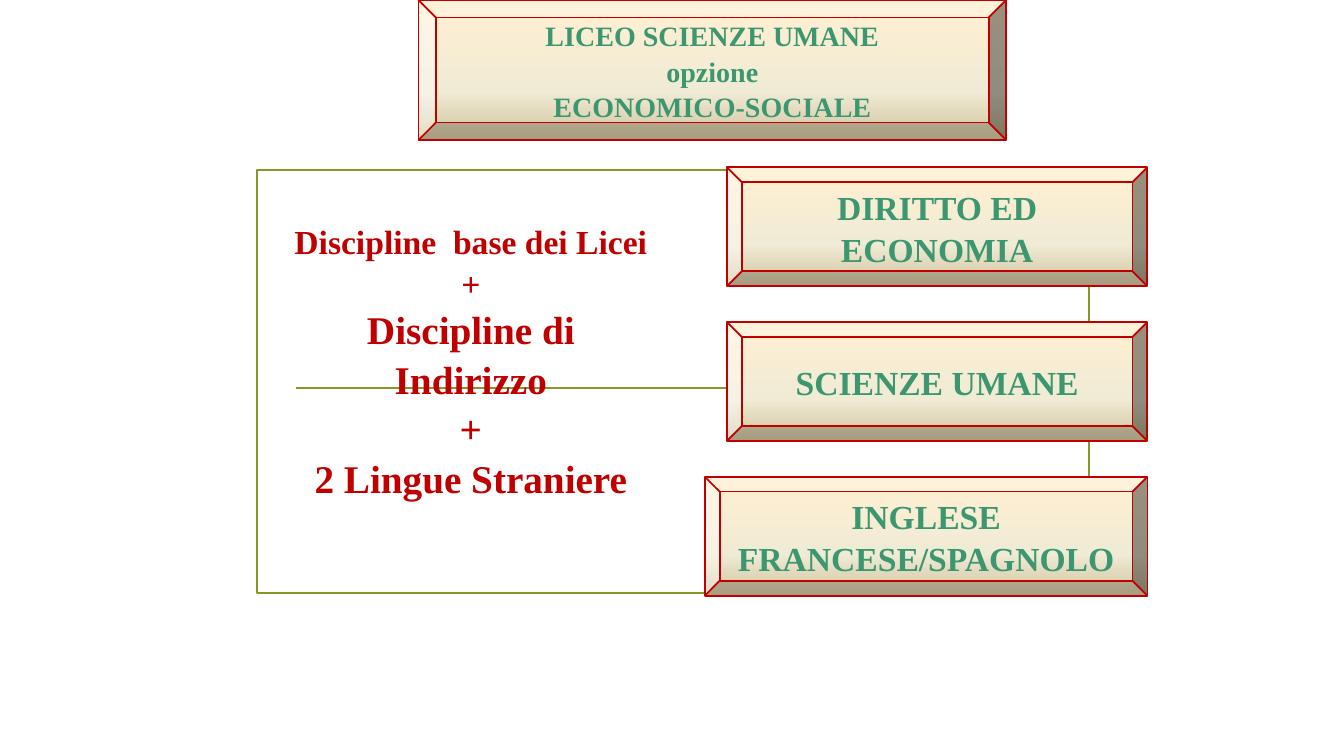
import copy
from dataclasses import dataclass

import pptx
import pptx.dml.color
import pptx.enum.shapes
import pptx.enum.text
import pptx.oxml
import pptx.util
from pptx.util import Inches


@dataclass(frozen=True)
class Theme:
    font: str = "Times New Roman"
    heading: str = "3C9770"
    accent: str = "C00000"
    frame: str = "83992A"
    gradient: tuple = ((0, "FFEFD1"), (0.65, "F0EBD5"), (1, "D1C39F"))
    title_size: int = 20
    text_size: int = 24
    large_size: int = 28
    line_width: float = 1.25
    spacing: float = 1.05


THEME = Theme()
TITLE = ["LICEO SCIENZE UMANE", "opzione", "ECONOMICO-SOCIALE"]
DISCIPLINES = [
    ("Discipline  base dei Licei", THEME.text_size),
    ("+", THEME.text_size),
    ("Discipline di Indirizzo", THEME.large_size),
    ("+", THEME.large_size),
    ("2 Lingue Straniere", THEME.large_size),
]
SUBJECTS = [
    (["DIRITTO ED ECONOMIA"], 4.17),
    (["SCIENZE UMANE"], 4.17),
    (["INGLESE", "FRANCESE/SPAGNOLO"], 4.39),
]
TITLE_PLATE = (4.15, 0, 5.83, 1.39)
TITLE_RIM = 0.17
SUBJECT_RIGHT, SUBJECT_TOP, SUBJECT_HEIGHT, SUBJECT_STEP = 11.38, 1.66, 1.18, 1.535
SHAPES = pptx.enum.shapes.MSO_SHAPE


def rgb(value):
    return pptx.dml.color.RGBColor.from_string(value)


def place(part, left, top, width, height):
    part.left, part.top = Inches(left), Inches(top)
    part.width, part.height = Inches(width), Inches(height)


def outline(line, color):
    line.color.rgb = rgb(color)
    line.width = pptx.util.Pt(THEME.line_width)


def write(part, lines, color=THEME.heading, size=THEME.text_size, anchor="MIDDLE"):
    frame = part.text_frame
    frame.word_wrap = True
    frame.auto_size = pptx.enum.text.MSO_AUTO_SIZE.NONE
    frame.vertical_anchor = pptx.enum.text.MSO_ANCHOR[anchor]
    for index, entry in enumerate(lines):
        text, points = entry if isinstance(entry, tuple) else (entry, size)
        paragraph = frame.paragraphs[0] if index == 0 else frame.add_paragraph()
        properties = paragraph._p.get_or_add_pPr()
        properties.set("marL", "0")
        properties.set("indent", "0")
        properties.append(pptx.oxml.parse_xml(
            '<a:buNone xmlns:a="http://schemas.openxmlformats.org/drawingml/2006/main"/>'))
        paragraph.alignment = pptx.enum.text.PP_ALIGN.CENTER
        paragraph.line_spacing = THEME.spacing
        paragraph.space_before = pptx.util.Pt(0)
        run = paragraph.add_run()
        run.text = text
        run.font.name = THEME.font
        run.font.size = pptx.util.Pt(points)
        run.font.bold = True
        run.font.color.rgb = rgb(color)


def add_box(slide, kind, bounds):
    box = slide.shapes.add_shape(kind, *map(Inches, bounds))
    box.shadow.inherit = False
    return box


def add_plate(slide, bounds):
    plate = add_box(slide, SHAPES.BEVEL, bounds)
    plate.fill.gradient()
    plate.fill.gradient_angle = 270
    first = plate.fill.gradient_stops[0]._gs
    first.addnext(copy.deepcopy(first))
    for stop, (position, color) in zip(plate.fill.gradient_stops, THEME.gradient):
        stop.position = position
        stop.color.rgb = rgb(color)
    outline(plate.line, THEME.accent)
    return plate


def main():
    deck = pptx.Presentation()
    deck.slide_width, deck.slide_height = Inches(13.33), Inches(7.5)
    slide = deck.slides.add_slide(deck.slide_layouts[1])
    title, disciplines = slide.placeholders

    border = add_box(slide, SHAPES.RECTANGLE, (2.55, 1.69, 8.25, 4.19))
    border.fill.background()
    outline(border.line, THEME.frame)
    divider = slide.shapes.add_connector(
        pptx.enum.shapes.MSO_CONNECTOR.STRAIGHT,
        Inches(2.94), Inches(3.85), Inches(10.4), Inches(3.85))
    outline(divider.line, THEME.frame)
    divider._element.spPr.append(pptx.oxml.parse_xml(
        '<a:effectLst xmlns:a="http://schemas.openxmlformats.org/drawingml/2006/main"/>'))

    add_plate(slide, TITLE_PLATE)
    left, top, width, height = TITLE_PLATE
    place(title, left + TITLE_RIM, top + TITLE_RIM,
          width - 2 * TITLE_RIM, height - 2 * TITLE_RIM)
    write(title, TITLE, size=THEME.title_size)
    place(disciplines, 2.74, 2.12, 3.86, 2.79)
    write(disciplines, DISCIPLINES, color=THEME.accent, anchor="TOP")
    for placeholder in (title, disciplines):
        slide.shapes._spTree.append(placeholder._element)

    for row, (lines, width) in enumerate(SUBJECTS):
        plate = add_plate(slide, (SUBJECT_RIGHT - width, SUBJECT_TOP + row * SUBJECT_STEP,
                                  width, SUBJECT_HEIGHT))
        write(plate, lines)

    deck.save("out.pptx")


if __name__ == "__main__":
    main()
